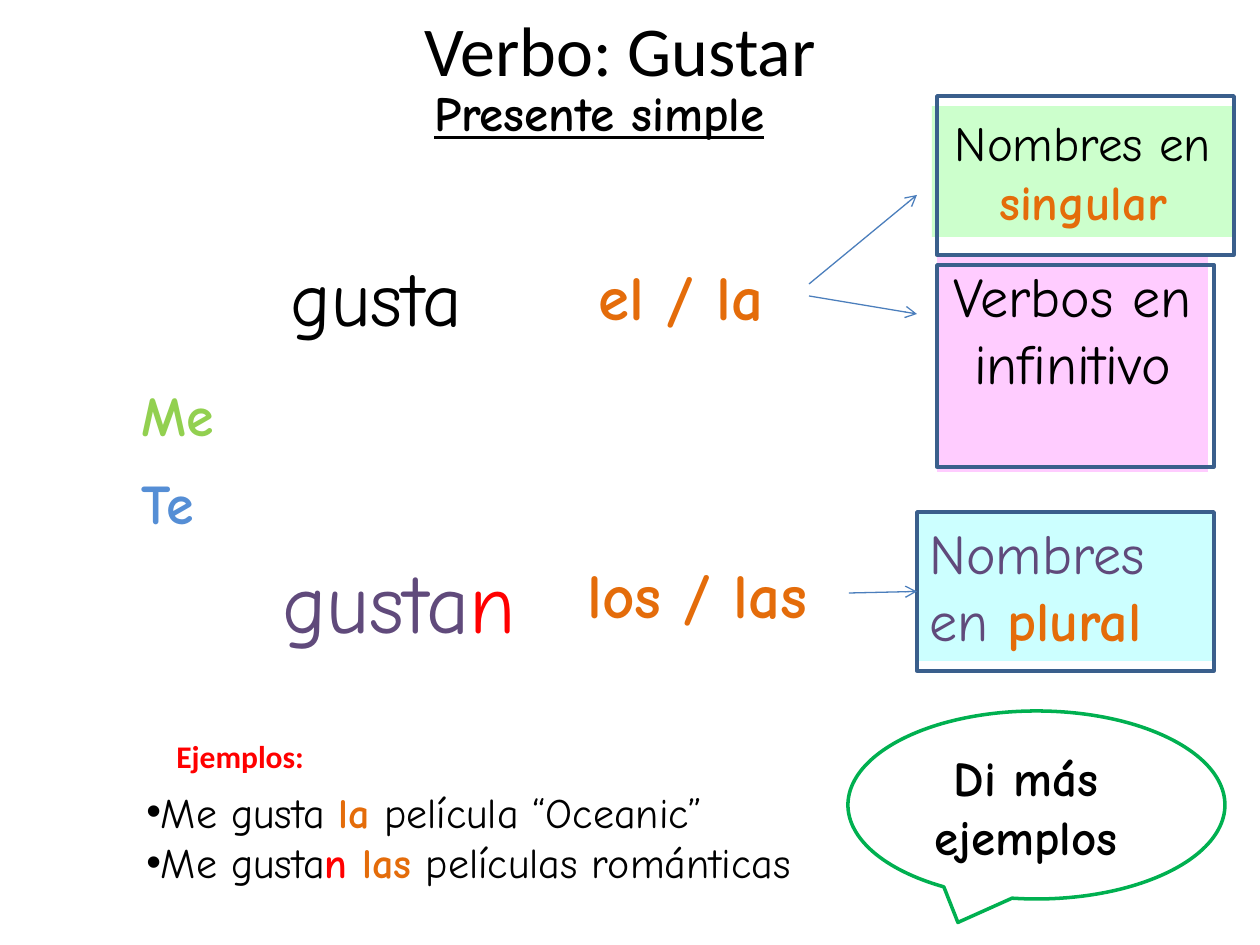
from lxml.etree import SubElement
from pptx import Presentation
from pptx.dml.color import RGBColor
from pptx.enum.shapes import MSO_CONNECTOR as Connector, MSO_SHAPE as Preset
from pptx.enum.text import MSO_ANCHOR as Anchor, MSO_AUTO_SIZE as AutoSize, PP_ALIGN as Align
from pptx.oxml.ns import qn
from pptx.util import Emu, Pt

BLACK, RED, ORANGE, PURPLE = "000000", "FF0000", "E46C0A", "604A7B"
GREEN, BLUE, NAVY, ARROW_BLUE, BUBBLE_GREEN = "92D050", "558ED5", "3A5F8C", "4B7EBC", "00B050"


def px(length):
    return Emu(round(length * 914400 / 126))


def color(value):
    return RGBColor.from_string(value)


class GrammarSlide:
    """Hold the text style and the current slide, and draw each kind of element on it."""

    font_name = "Comic Neue"

    def __init__(self, presentation):
        self.slide = presentation.slides.add_slide(presentation.slide_layouts[6])

    def set_text(self, shape, paragraphs, size, wrap=False, align=Align.LEFT, space_after=0,
                 bullet=None, **style):
        frame = shape.text_frame
        settings = {"word_wrap": wrap, "auto_size": AutoSize.SHAPE_TO_FIT_TEXT,
                    "vertical_anchor": Anchor.TOP}
        for name, value in settings.items():
            setattr(frame, name, value)
        for index, runs in enumerate(paragraphs):
            paragraph = frame.add_paragraph() if index else frame.paragraphs[0]
            paragraph.alignment = align
            if space_after:
                paragraph.space_after = Pt(space_after)
            if bullet:
                self.add_bullet(paragraph, bullet)
            for text, run_color, *extra in runs:
                run = paragraph.add_run()
                run.text = text
                values = {"name": self.font_name, "size": size, **style}
                for changes in extra:
                    values.update(changes)
                values["size"] = Pt(values["size"])
                for name, value in values.items():
                    setattr(run.font, name, value)
                run.font.color.rgb = color(run_color)

    def add_bullet(self, paragraph, character):
        properties = paragraph._p.get_or_add_pPr()
        properties.set("marL", "0")
        properties.set("indent", "0")
        SubElement(properties, qn("a:buFont")).set("typeface", "Arial")
        SubElement(properties, qn("a:buChar")).set("char", character)

    def text(self, box, paragraphs, size, **style):
        shape = self.slide.shapes.add_textbox(*map(px, box))
        self.set_text(shape, paragraphs, size, **style)

    def shape(self, preset, box, fill=None, line=None):
        shape = self.slide.shapes.add_shape(preset, *map(px, box))
        shape.shadow.inherit = False
        if fill:
            shape.fill.solid()
            shape.fill.fore_color.rgb = color(fill)
        else:
            shape.fill.background()
        if line:
            shape.line.color.rgb = color(line)
            shape.line.width = Pt(2)
        else:
            shape.line.fill.background()
        return shape

    def panel(self, box, fill, runs, size, align=Align.CENTER):
        shape = self.shape(Preset.RECTANGLE, box, fill=fill)
        self.set_text(shape, [runs], size, wrap=True, align=align)

    def arrow(self, start, end, target=None):
        arrow = self.slide.shapes.add_connector(Connector.STRAIGHT, *map(px, start + end))
        if target is not None:
            arrow.end_connect(target, 1)
        arrow.line.color.rgb = color(ARROW_BLUE)
        arrow.line.width = Pt(0.75)
        properties = arrow._element.spPr
        SubElement(properties.find(qn("a:ln")), qn("a:tailEnd")).set("type", "arrow")
        SubElement(properties, qn("a:effectLst"))


def main():
    presentation = Presentation()
    presentation.slide_width, presentation.slide_height = px(1260), px(945)
    page = GrammarSlide(presentation)
    bold, regular = {"bold": True}, {"bold": False}

    page.text((412, 0, 437, 97), [[("Verbo: Gustar", BLACK)]], 40, name="Calibri")
    page.text((129, 374, 107, 170), [[("Me", GREEN)], [("Te", BLUE)]], 32,
              space_after=12, bold=True)
    page.text((278, 243, 222, 106), [[("gusta", BLACK)]], 44)
    page.text((270, 501, 321, 165),
              [[("gusta", PURPLE), ("n", RED), (" ", BLACK, {"size": 72})]], 48)

    page.arrow((809, 284), (917, 195))
    page.arrow((809, 296), (917, 314))
    page.panel((932, 106, 302, 131), "CCFFCC",
               [("Nombres en ", BLACK), ("singular", ORANGE, bold)], 28)
    page.panel((937, 255, 271, 217), "FFCCFF", [("Verbos en infinitivo", BLACK)], 32)
    for box in ((937, 96, 297, 159), (937, 265, 277, 202)):
        page.shape(Preset.RECTANGLE, box, line=NAVY)
    page.panel((917, 512, 297, 149), "CCFFFF",
               [("Nombres en ", PURPLE), ("plural", ORANGE, bold)], 32, align=Align.LEFT)
    plural_frame = page.shape(Preset.RECTANGLE, (917, 512, 297, 159), line=NAVY)

    page.text((164, 731, 161, 50), [[("Ejemplos:", RED)]], 18, name="Calibri", bold=True)
    examples = [
        [("Me gusta ", BLACK), ("la", ORANGE, bold), (" película “Oceanic”", BLACK, regular)],
        [("Me gusta", BLACK), ("n ", RED, bold), ("las", ORANGE, bold),
         (" películas románticas", BLACK, regular)],
    ]
    page.text((134, 780, 732, 115), examples, 24, bullet="•")

    page.shape(Preset.OVAL_CALLOUT, (848, 711, 377, 188), line=BUBBLE_GREEN)
    page.text((907, 741, 238, 131), [[("Di más ejemplos", BLACK)]], 28,
              wrap=True, align=Align.CENTER, bold=True)
    page.text((422, 76, 397, 72), [[("Presente simple", BLACK)]], 28,
              bold=True, underline=True)
    page.text((586, 251, 224, 89), [[("el / la", ORANGE)]], 36, wrap=True, bold=True)
    page.arrow((849, 593), (917, 591), target=plural_frame)
    page.text((575, 549, 287, 89), [[("los / las", ORANGE)]], 36, wrap=True, bold=True)

    presentation.save("out.pptx")


if __name__ == "__main__":
    main()
